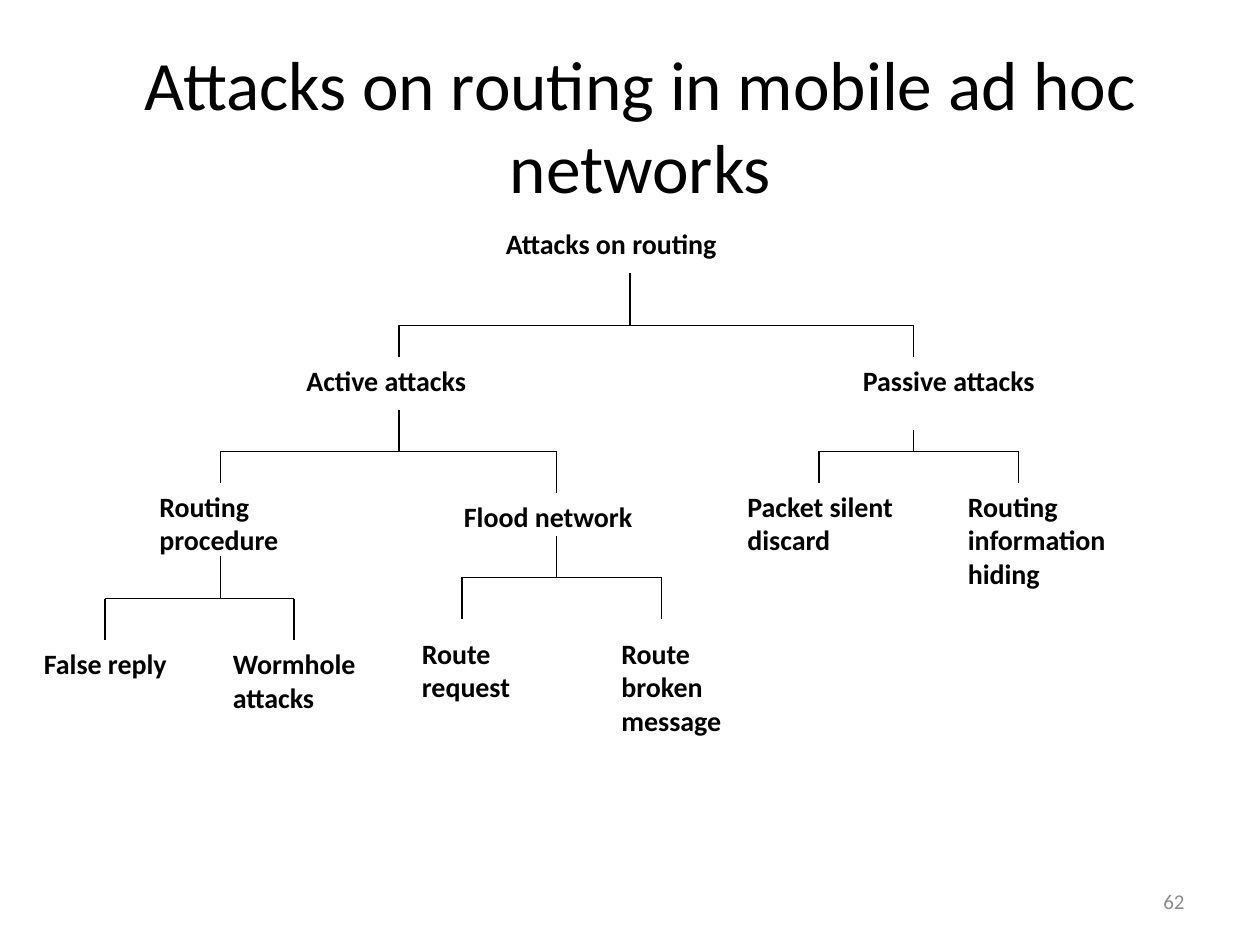
from dataclasses import dataclass

from lxml import etree
from pptx import Presentation
from pptx import util as u
from pptx.dml.color import RGBColor
from pptx.enum import shapes, text
from pptx.oxml import ns


@dataclass(frozen=True)
class Theme:
    font: str = "Calibri"
    ink: str = "000000"
    muted: str = "8C8C8C"
    title: float = 39.6
    label: float = 16
    number: float = 12
    rule: float = 0.75


THEME = Theme()
COLUMNS, ROWS = 120, 90
WIDTH, HEIGHT = u.Inches(10), u.Inches(7.5)

# Label: wording, column, row, columns wide, lines of height
LABELS = [
    ("Attacks on routing", 47, 21, 26, 1),
    ("Active attacks", 28, 34, 23, 1),
    ("Passive attacks", 81, 34, 22, 2),
    ("Packet silent discard", 70, 46, 19, 2),
    ("Routing information hiding", 91, 46, 19, 3),
    ("Routing procedure", 14, 46, 17, 2),
    ("Flood network", 43, 47, 21, 1),
    ("False reply", 3, 61, 18, 1),
    ("Wormhole attacks", 21, 61, 18, 2),
    ("Route request", 39, 60, 16, 2),
    ("Route broken message", 58, 60, 14, 3),
]

# Branch: stem column, stem top row, bar row, {child column: row where its drop ends}
BRANCHES = [
    (60, 26, 31, {38: 34, 87: 34}),
    (38, 39, 43, {21: 46, 53: 47}),
    (87, 41, 43, {78: 46, 97: 46}),
    (21, 53, 57, {10: 61, 28: 61}),
    (53, 51, 55, {44: 59, 63: 59}),
]


def across(column):
    return round(WIDTH * column / COLUMNS)


def down(row):
    return round(HEIGHT * row / ROWS)


def add_text(slide, wording, box, size, color=THEME.ink, bold=False,
             align=text.PP_ALIGN.LEFT, anchor=text.MSO_ANCHOR.TOP,
             fit=text.MSO_AUTO_SIZE.NONE):
    frame = slide.shapes.add_textbox(*box).text_frame
    paragraph = frame.paragraphs[0]
    run = paragraph.add_run()
    run.text = wording
    formats = {
        frame: {"word_wrap": True, "vertical_anchor": anchor, "auto_size": fit},
        paragraph: {"alignment": align},
        run.font: {"name": THEME.font, "size": u.Pt(size), "bold": bold},
    }
    for target, values in formats.items():
        for attribute, value in values.items():
            setattr(target, attribute, value)
    run.font.color.rgb = RGBColor.from_string(color)


def add_label(slide, wording, column, row, columns, lines):
    box = (across(column), down(row), across(columns), u.Inches(0.1 + 0.27 * lines))
    add_text(slide, wording, box, THEME.label, bold=True,
             fit=text.MSO_AUTO_SIZE.SHAPE_TO_FIT_TEXT)


def add_rule(slide, start, end):
    rule = slide.shapes.add_connector(
        shapes.MSO_CONNECTOR.STRAIGHT,
        across(start[0]), down(start[1]), across(end[0]), down(end[1]))
    rule.line.color.rgb = RGBColor.from_string(THEME.ink)
    rule.line.width = u.Pt(THEME.rule)
    # An empty effect list removes the default shadow
    etree.SubElement(rule._element.spPr, ns.qn("a:effectLst"))


def add_branch(slide, stem, top, bar, drops):
    add_rule(slide, (stem, top), (stem, bar))
    add_rule(slide, (min(drops), bar), (max(drops), bar))
    for child, bottom in drops.items():
        add_rule(slide, (child, bar), (child, bottom))


def main():
    deck = Presentation()
    deck.slide_width, deck.slide_height = WIDTH, HEIGHT
    slide = deck.slides.add_slide(deck.slide_layouts[6])

    # Slide number and title
    add_text(slide, "62", (across(86), down(83.4), across(28), down(4.8)),
             THEME.number, THEME.muted, align=text.PP_ALIGN.RIGHT,
             anchor=text.MSO_ANCHOR.MIDDLE)
    add_text(slide, "Attacks on routing in mobile ad hoc networks",
             (across(6), down(7.7), across(110), down(8.3)), THEME.title,
             align=text.PP_ALIGN.CENTER, anchor=text.MSO_ANCHOR.MIDDLE)

    # Tree of attacks
    for label in LABELS:
        add_label(slide, *label)
    for branch in BRANCHES:
        add_branch(slide, *branch)

    deck.save("out.pptx")


if __name__ == "__main__":
    main()
